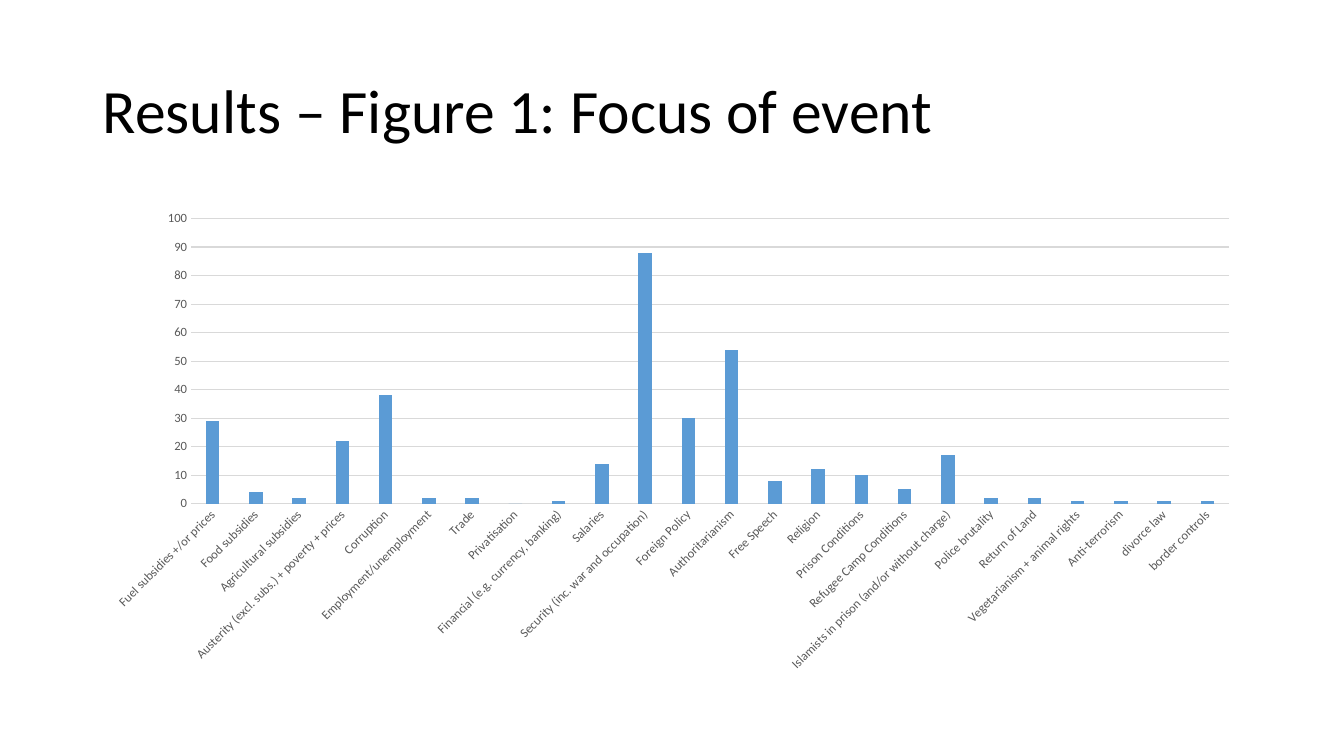
"""Build the slide with a column chart of event focus."""
import pptx
import pptx.chart.data
import pptx.dml.color
import pptx.enum.chart
import pptx.enum.text
import pptx.util
from pptx.util import Inches

COLORS = {"title": "000000", "labels": "595959", "lines": "D9D9D9", "bars": "5B9BD5"}
FONT = "Calibri"
FOCUS_COUNTS = {
    "Fuel subsidies +/or prices": 29,
    "Food subsidies": 4,
    "Agricultural subsidies": 2,
    "Austerity (excl. subs.) + poverty + prices": 22,
    "Corruption": 38,
    "Employment/unemployment": 2,
    "Trade": 2,
    "Privatisation": 0,
    "Financial (e.g. currency, banking)": 1,
    "Salaries": 14,
    "Security (inc. war and occupation)": 88,
    "Foreign Policy": 30,
    "Authoritarianism": 54,
    "Free Speech": 8,
    "Religion": 12,
    "Prison Conditions": 10,
    "Refugee Camp Conditions": 5,
    "Islamists in prison (and/or without charge)": 17,
    "Police brutality": 2,
    "Return of Land": 2,
    "Vegetarianism + animal rights": 1,
    "Anti-terrorism": 1,
    "divorce law": 1,
    "border controls": 1,
}


def rgb(name):
    return pptx.dml.color.RGBColor.from_string(COLORS[name])


def style_font(font, size, color):
    font.name = FONT
    font.size = pptx.util.Pt(size)
    font.bold = False
    font.color.rgb = rgb(color)


presentation = pptx.Presentation()
presentation.slide_width = Inches(13.33)
presentation.slide_height = Inches(7.5)
slide = presentation.slides.add_slide(presentation.slide_layouts[5])

title = slide.shapes.title
title.left, title.top = Inches(0.92), Inches(0.4)
title.width, title.height = Inches(11.5), Inches(1.45)
title.text_frame.text = "Results – Figure 1: Focus of event"
title.text_frame.vertical_anchor = pptx.enum.text.MSO_ANCHOR.MIDDLE
heading = title.text_frame.paragraphs[0]
heading.alignment = pptx.enum.text.PP_ALIGN.LEFT
heading.line_spacing = 0.9
style_font(heading.font, 44, "title")

focus_data = pptx.chart.data.CategoryChartData()
focus_data.categories = list(FOCUS_COUNTS)
focus_data.add_series("Series 1", list(FOCUS_COUNTS.values()))
focus_chart = slide.shapes.add_chart(
    pptx.enum.chart.XL_CHART_TYPE.COLUMN_CLUSTERED,
    Inches(0.92), Inches(2), Inches(11.5), Inches(4.76), focus_data,
).chart
focus_chart.has_legend = False
focus_chart.has_title = False
style_font(focus_chart.font, 10, "title")

columns = focus_chart.plots[0]
columns.gap_width = 219
columns.overlap = -27
columns.vary_by_categories = False
bars = columns.series[0].format.fill
bars.solid()
bars.fore_color.rgb = rgb("bars")

focus_axis, count_axis = focus_chart.category_axis, focus_chart.value_axis
for axis in (focus_axis, count_axis):
    axis.major_tick_mark = pptx.enum.chart.XL_TICK_MARK.NONE
    axis.minor_tick_mark = pptx.enum.chart.XL_TICK_MARK.NONE
    style_font(axis.tick_labels.font, 9, "labels")

count_axis.minimum_scale = 0
count_axis.maximum_scale = 100
count_axis.major_unit = 10
count_axis.has_major_gridlines = True
count_axis.format.line.fill.background()
for line in (focus_axis.format.line, count_axis.major_gridlines.format.line):
    line.width = pptx.util.Pt(0.75)
    line.color.rgb = rgb("lines")

presentation.save("out.pptx")
